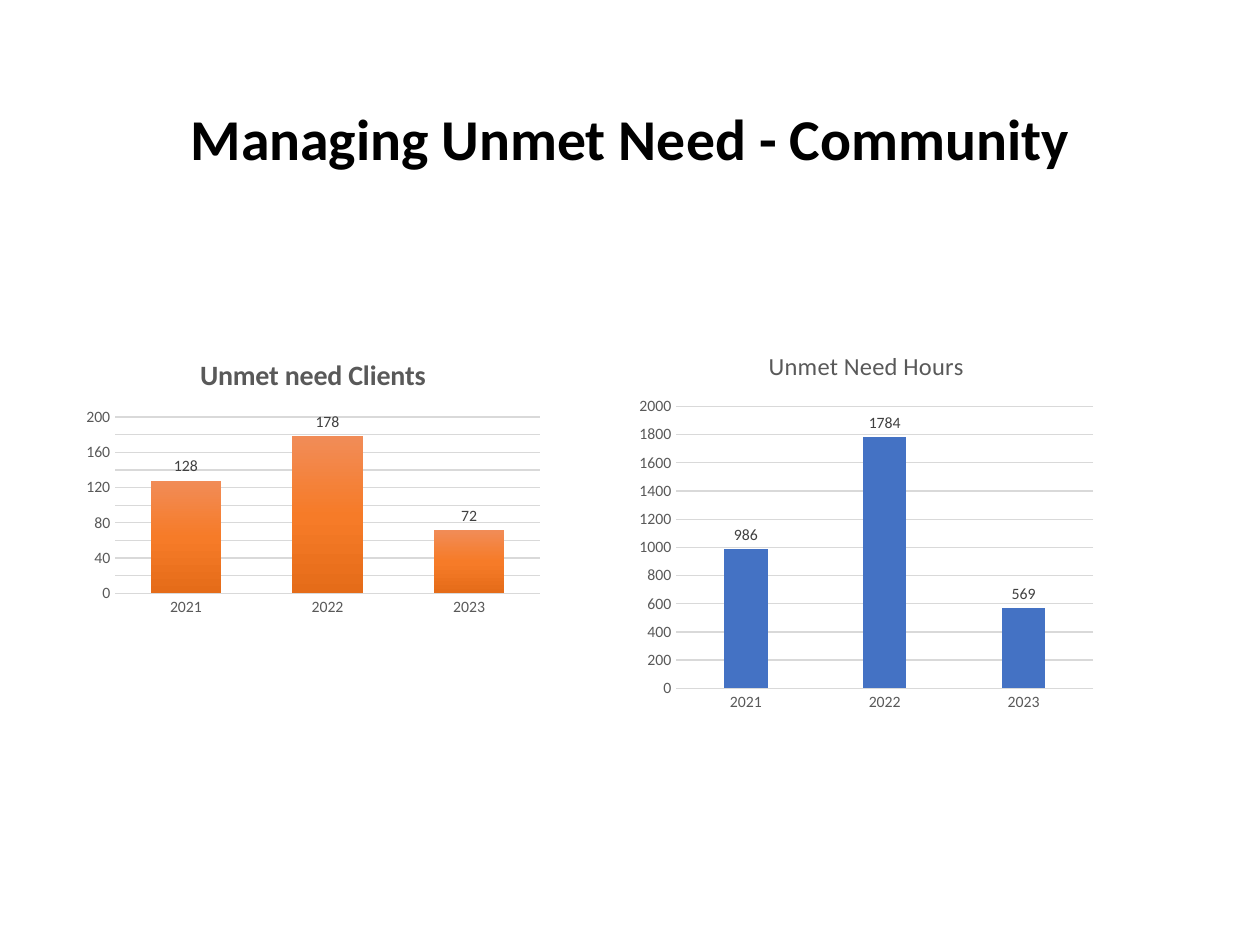
from copy import deepcopy
from dataclasses import dataclass

from pptx import Presentation
from pptx.chart.data import CategoryChartData
from pptx.dml.color import RGBColor
from pptx.enum.chart import XL_CHART_TYPE as ChartType
from pptx.enum.chart import XL_LABEL_POSITION as LabelPosition
from pptx.enum.chart import XL_TICK_MARK as TickMark
from pptx.enum.text import MSO_ANCHOR as Anchor
from pptx.enum.text import PP_ALIGN as Align
from pptx.util import Inches, Pt

FONT = "Calibri"
COLORS = {
    "heading": "000000",
    "axis": "595959",
    "label": "404040",
    "grid": "D9D9D9",
    "hours": "4472C4",
    "clients_top": "F18C57",
    "clients_middle": "F67B28",
    "clients_bottom": "E56C19",
}
YEARS = ("2021", "2022", "2023")


@dataclass(frozen=True)
class ColumnChart:
    title: str
    values: tuple[int, ...]
    box: tuple[float, float, float, float]
    title_size: int
    title_bold: bool
    gap: int
    overlap: int
    axis_width: float
    axis_max: int
    major_unit: int
    fills: tuple[str, ...]


CHARTS = (
    ColumnChart("Unmet need Clients", (128, 178, 72), (0.61, 2.69, 3.75, 2.25),
                16, True, 100, -24, 1, 200, 20,
                ("clients_top", "clients_middle", "clients_bottom")),
    ColumnChart("Unmet Need Hours", (986, 1784, 569), (5, 2.62, 3.75, 3.09),
                14, False, 219, -27, 0.75, 2000, 200, ("hours",)),
)


def rgb(color: str) -> RGBColor:
    return RGBColor.from_string(COLORS[color])


def style_font(font, size: float, color: str, bold: bool = False) -> None:
    font.name = FONT
    font.size = Pt(size)
    font.bold = bold
    font.color.rgb = rgb(color)


def style_line(line, color: str, width: float) -> None:
    line.color.rgb = rgb(color)
    line.width = Pt(width)


def fill_series(series, colors: tuple[str, ...]) -> None:
    """Fill with one colour, or with an even top-to-bottom gradient of several."""
    fill = series.format.fill
    if len(colors) == 1:
        fill.solid()
        fill.fore_color.rgb = rgb(colors[0])
        return
    fill.gradient()
    fill.gradient_angle = 270
    stop_list = series._element.xpath(".//a:gsLst")[0]
    for _ in colors[2:]:
        stop_list.append(deepcopy(stop_list[0]))
    for index, (stop, color) in enumerate(zip(fill.gradient_stops, colors)):
        stop.position = index / (len(colors) - 1)
        stop.color.rgb = rgb(color)


def add_column_chart(slide, spec: ColumnChart) -> None:
    data = CategoryChartData(number_format="0")
    data.categories = YEARS
    data.add_series(spec.title, spec.values)
    chart = slide.shapes.add_chart(
        ChartType.COLUMN_CLUSTERED, *map(Inches, spec.box), data).chart
    style_font(chart.font, 10, "heading")
    chart.has_legend = False

    chart.has_title = True
    title_run = chart.chart_title.text_frame.paragraphs[0].add_run()
    title_run.text = spec.title
    style_font(title_run.font, spec.title_size, "axis", spec.title_bold)
    chart.chart_title.include_in_layout = False

    years, amounts = chart.category_axis, chart.value_axis
    for axis in (years, amounts):
        axis.major_tick_mark = axis.minor_tick_mark = TickMark.NONE
        style_font(axis.tick_labels.font, 9, "axis")
    style_line(years.format.line, "grid", spec.axis_width)
    amounts.format.line.fill.background()
    amounts.minimum_scale = 0
    amounts.maximum_scale = spec.axis_max
    amounts.major_unit = spec.major_unit
    style_line(amounts.major_gridlines.format.line, "grid", 0.75)

    plot = chart.plots[0]
    plot.vary_by_categories = False
    plot.gap_width = spec.gap
    plot.overlap = spec.overlap
    fill_series(plot.series[0], spec.fills)
    plot.has_data_labels = True
    labels = plot.data_labels
    labels.show_value = True
    labels.position = LabelPosition.OUTSIDE_END
    style_font(labels.font, 9, "label")


def add_heading(slide, text: str) -> None:
    frame = slide.shapes.add_textbox(
        Inches(0.69), Inches(0.4), Inches(8.62), Inches(1.45)).text_frame
    frame.word_wrap = True
    frame.vertical_anchor = Anchor.MIDDLE
    paragraph = frame.paragraphs[0]
    paragraph.alignment = Align.CENTER
    paragraph.line_spacing = 0.9
    run = paragraph.add_run()
    run.text = text
    style_font(run.font, 33, "heading", bold=True)


def main() -> None:
    deck = Presentation()
    deck.slide_width, deck.slide_height = Inches(10), Inches(7.5)
    slide = deck.slides.add_slide(deck.slide_layouts[6])
    for spec in CHARTS:
        add_column_chart(slide, spec)
    add_heading(slide, "Managing Unmet Need - Community")
    deck.save("out.pptx")


if __name__ == "__main__":
    main()
